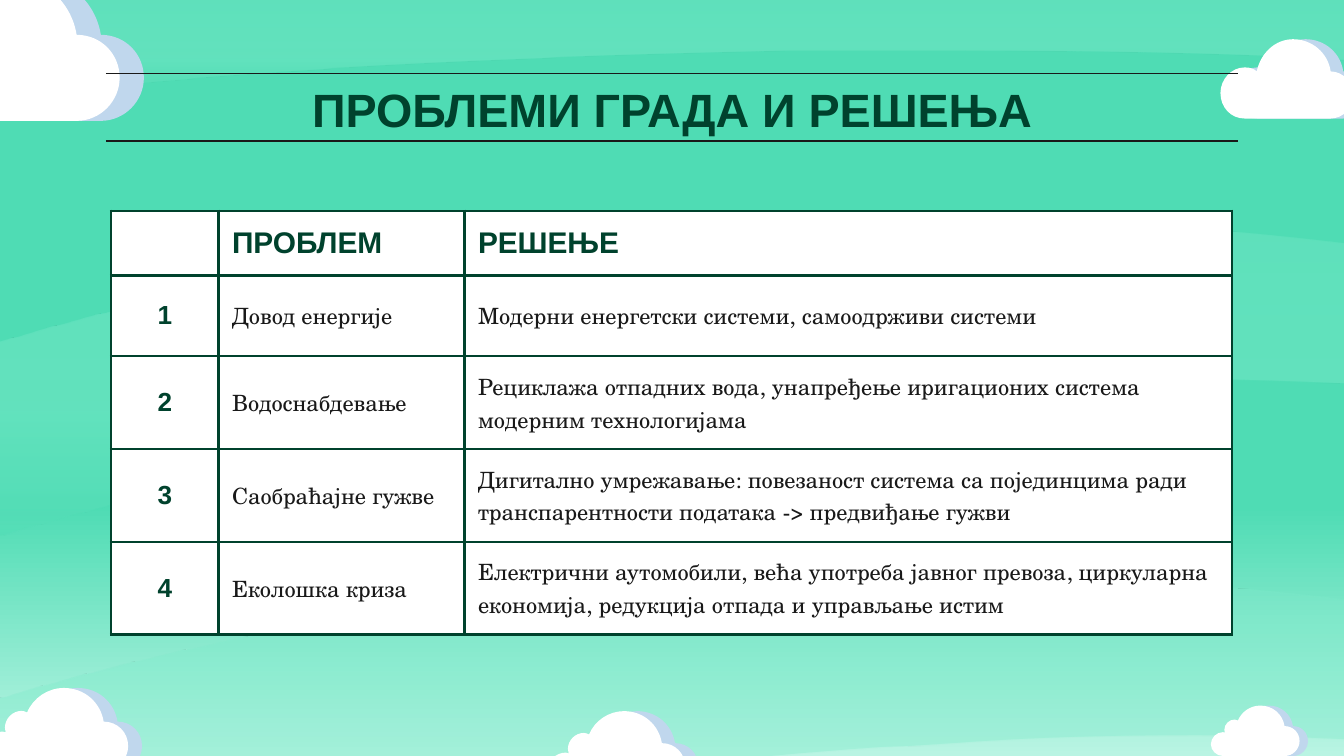
from lxml import etree
from pptx import Presentation
from pptx.dml.color import RGBColor
from pptx.enum import shapes, text
from pptx.oxml.ns import qn
from pptx.util import Pt

HUE = {"dark": "00422D", "ink": "191919", "white": "FFFFFF", "shade": "C0D7ED",
       "pale": "B9F4E3", "mint": "80EBCC", "green": "4FDCB4"}

TITLE = "ПРОБЛЕМИ ГРАДА И РЕШЕЊА"
ROWS = [
    ("", "ПРОБЛЕМ", "РЕШЕЊЕ"),
    ("1", "Довод енергије", "Модерни енергетски системи, самоодрживи системи"),
    ("2", "Водоснабдевање",
     "Рециклажа отпадних вода, унапређење иригационих система модерним технологијама"),
    ("3", "Саобраћајне гужве",
     "Дигитално умрежавање: повезаност система са појединцима ради "
     "транспарентности података -> предвиђање гужви"),
    ("4", "Еколошка криза",
     "Електрични аутомобили, већа употреба јавног превоза, циркуларна економија, "
     "редукција отпада и управљање истим"),
]
WIDE = (57.6, 131.8, 411.1)
HIGH = (34.3, 43.2, 49.3, 49.7, 49.7)

HEAD = {"size": Pt(16), "name": "Arial", "bold": True}
MARK = {"size": Pt(14), "name": "Arial", "bold": True}
BODY = {"size": Pt(12), "name": "TeX Gyre Schola", "bold": False}
TOP = {"size": Pt(25), "name": "Arial", "bold": True}
PAD = {"margin_" + side: Pt(7.2) for side in ("left", "top", "right", "bottom")}
PAD["vertical_anchor"] = text.MSO_ANCHOR.MIDDLE

# Outlines: a pair is a straight step, six numbers are a Bezier curve
CREST = [(298, -2), (199, -2, 99, -2, 0, -1), (0, 53), (13, 51, 27, 49, 40, 48),
         (163, 35, 292, 30, 423, 27), (451, 27, 480, 27, 508, 27),
         (579, 27, 650, 28, 720, 32), (720, -1), (635, -1, 550, -2, 464, -2),
         (298, -2)]
WAVE = [(505, 0), (460, 0, 415, 1, 370, 4), (243, 9, 117, 30, 0, 65), (0, 169),
        (28, 160, 58, 153, 87, 145), (222, 113, 366, 97, 509, 89),
        (552, 86, 596, 85, 640, 85), (667, 85, 693, 86, 720, 87), (720, 12),
        (649, 4, 577, 0, 505, 0)]
PUFF = [(106, 0), (85, 0, 66, 13, 58, 32), (56, 31, 53, 30, 51, 30),
        (39, 30, 29, 40, 29, 52), (29, 54, 29, 56, 30, 58),
        (29, 58, 27, 57, 26, 57), (12, 57, 0, 69, 0, 83),
        (0, 96, 12, 108, 26, 108), (158, 108), (176, 108, 190, 93, 190, 76),
        (190, 58, 176, 44, 158, 44), (154, 19, 133, 0, 106, 0)]
TUFT = [(54, 0), (41, 0, 30, 10, 27, 24), (25, 22, 22, 21, 18, 21),
        (8, 21, 0, 30, 0, 40), (0, 51, 8, 59, 18, 59), (82, 59),
        (91, 59, 99, 51, 99, 42), (99, 32, 91, 24, 82, 24), (80, 10, 68, 0, 54, 0)]
BANDS = [(CREST, 0), (WAVE, 309), (WAVE, 118)]
# outline, left, top, scale
CLOUDS = [(PUFF, 293, 381, 0.39), (PUFF, -9.2, 368.6, 0.41), (PUFF, -72.7, -13, 0.72),
          (PUFF, 648.7, 378, 0.25), (TUFT, 653.8, 21, 0.72)]


def color(name):
    return RGBColor.from_string(HUE[name])


def apply(item, form):
    for key, val in form.items():
        setattr(item, key, val)


def blend(root, stops, angle):
    """Fill the gradient inside root with (place, hue, opacity) stops."""
    grad = next(root.iter(qn("a:gradFill")))
    bank = grad.find(qn("a:gsLst"))
    for old in list(bank):
        bank.remove(old)
    for place, name, alpha in stops:
        stop = etree.SubElement(bank, qn("a:gs"), pos=str(place * 1000))
        tone = etree.SubElement(stop, qn("a:srgbClr"), val=HUE[name])
        etree.SubElement(tone, qn("a:alpha"), val=str(alpha * 1000))
    grad.find(qn("a:lin")).set("ang", str(angle * 60000))


def draw(slide, path, left, top, scale=1.0):
    """Build the outline from its corners, then bend the steps that are curves."""
    def spot(x, y):
        return Pt(left + x * scale), Pt(top + y * scale)

    dots = [spot(*part[-2:]) for part in path]
    pen = slide.shapes.build_freeform(*dots[0])
    pen.add_line_segments(dots[1:], close=True)
    shape = pen.convert_to_shape()
    lines = list(shape._element.iter(qn("a:lnTo")))
    for line, part in zip(lines, path[1:]):
        if len(part) == 6:
            line.tag = qn("a:cubicBezTo")
            for k in (0, 1):
                x, y = spot(*part[2 * k:2 * k + 2])
                line.insert(k, etree.Element(qn("a:pt"), x=str(x - shape.left),
                                             y=str(y - shape.top)))
    shape.shadow.inherit = False
    shape.line.fill.background()
    return shape


def write(para, words, form, hue, align):
    para.alignment = align
    run = para.add_run()
    run.text = words
    apply(run.font, form)
    run.font.color.rgb = color(hue)


def frame(cell):
    props = cell._tc.get_or_add_tcPr()
    for side in ("lnL", "lnR", "lnT", "lnB"):
        edge = etree.SubElement(props, qn("a:" + side), w=str(Pt(1.5)))
        fill = etree.SubElement(edge, qn("a:solidFill"))
        etree.SubElement(fill, qn("a:srgbClr"), val=HUE["dark"])


def scene(slide):
    slide.background.fill.gradient()
    blend(slide._element, [(0, "pale", 100), (33, "green", 100), (100, "green", 100)], 270)
    for path, top in BANDS:
        band = draw(slide, path, 0, top)
        band.fill.gradient()
        blend(band._element, [(0, "mint", 32), (60, "mint", 39), (100, "green", 42)], 90)
    for path, left, top, scale in CLOUDS:
        shift = 0.095 * scale * max(part[-2] for part in path)
        for hue, move in (("shade", shift), ("white", 0)):
            cloud = draw(slide, path, left + move, top, scale)
            cloud.fill.solid()
            cloud.fill.fore_color.rgb = color(hue)


def header(slide):
    for y in (39.5, 75.5):
        rule = slide.shapes.add_connector(
            shapes.MSO_CONNECTOR.STRAIGHT, Pt(56.8), Pt(y), Pt(663.2), Pt(y))
        rule.line.width = Pt(0.75)
        rule.line.color.rgb = color("ink")
        etree.SubElement(rule._element.spPr, qn("a:effectLst"))
    title = slide.shapes.title
    apply(title, {"left": Pt(56.6), "top": Pt(35.6), "width": Pt(606.8), "height": Pt(45.4)})
    apply(title.text_frame, PAD)
    write(title.text_frame.paragraphs[0], TITLE, TOP, "dark", text.PP_ALIGN.CENTER)
    slide.shapes._spTree.append(title._element)


def grid(slide):
    table = slide.shapes.add_table(len(ROWS), len(WIDE), Pt(59.5), Pt(113),
                                   Pt(sum(WIDE)), Pt(sum(HIGH))).table
    apply(table, {"first_row": False, "horz_banding": False})
    for col, size in zip(table.columns, WIDE):
        col.width = Pt(size)
    for r, (row, size) in enumerate(zip(ROWS, HIGH)):
        table.rows[r].height = Pt(size)
        for c, words in enumerate(row):
            cell = table.cell(r, c)
            apply(cell, PAD)
            frame(cell)
            cell.fill.solid()
            cell.fill.fore_color.rgb = color("white")
            form = HEAD if r == 0 else MARK if c == 0 else BODY
            write(cell.text_frame.paragraphs[0], words, form,
                  "ink" if form is BODY else "dark",
                  text.PP_ALIGN.LEFT if c else text.PP_ALIGN.CENTER)


def main():
    deck = Presentation()
    apply(deck, {"slide_width": Pt(720), "slide_height": Pt(405)})
    slide = deck.slides.add_slide(deck.slide_layouts[5])
    scene(slide)
    header(slide)
    grid(slide)
    deck.save("out.pptx")


if __name__ == "__main__":
    main()
